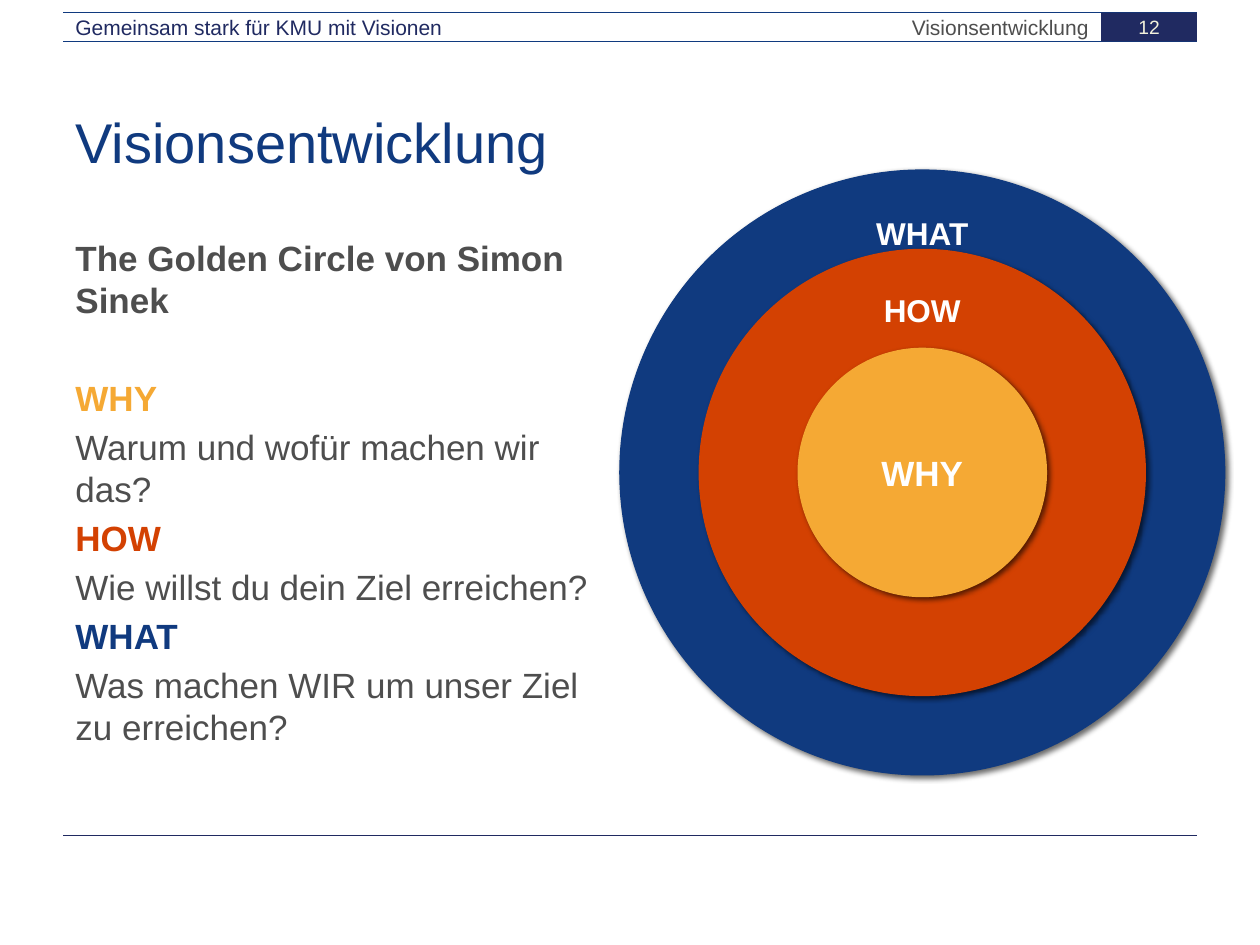
from lxml import etree
from pptx import Presentation
from pptx.dml.color import RGBColor
from pptx.enum import shapes, text
from pptx.oxml import ns
from pptx.util import Inches, Pt

THEME = {
    "font": "Arial",
    "blue": "103A7F", "navy": "202A61", "orange": "D34102", "yellow": "F5A934",
    "grey": "4E4E4E", "cream": "F3F2DC", "white": "FFFFFF",
    "title": 32, "body": 20, "ring": 18, "header": 12, "number": 11,
}
LEFT, TOP, CENTER, RIGHT = text.PP_ALIGN.LEFT, text.MSO_ANCHOR.TOP, text.PP_ALIGN.CENTER, text.PP_ALIGN.RIGHT

TITLE = "Visionsentwicklung"
RULES = [(0.1, "blue"), (0.33, "blue"), (6.63, "navy")]  # height, colour
HEADERS = [  # wording, left, width, colour, alignment
    ("Gemeinsam stark für KMU mit Visionen", 0.5, 4.3, "navy", LEFT),
    ("Visionsentwicklung", 4.8, 3.94, "grey", RIGHT),
]
PAGE_NUMBER = "12"
BODY = [  # wording, colour, bold, space before in points
    ("The Golden Circle von Simon Sinek", "grey", True, 0),
    ("WHY", "yellow", True, 32),
    ("Warum und wofür machen wir das?", "grey", False, 4),
    ("HOW", "orange", True, 4),
    ("Wie willst du dein Ziel erreichen?", "grey", False, 4),
    ("WHAT", "blue", True, 4),
    ("Was machen WIR um unser Ziel zu erreichen?", "grey", False, 4),
]
CIRCLE_CENTER = (7.32, 3.75)
CIRCLES = [(4.8, "blue"), (3.54, "orange"), (1.97, "yellow")]  # diameter, colour
CORE_LABEL = "WHY"
RING_LABELS = [("WHAT", 1.65, 1.0), ("HOW", 2.26, 0.84)]  # wording, top, width


def color(name):
    return RGBColor.from_string(THEME[name])


def format_paragraph(paragraph, size, color_name, bold=False, align=LEFT):
    paragraph.alignment = align
    for run in paragraph.runs:
        run.font.name = THEME["font"]
        run.font.size = Pt(THEME[size])
        run.font.bold = bold
        run.font.color.rgb = color(color_name)


def write(shape, wording, size, color_name, bold=False, align=LEFT,
          anchor=text.MSO_ANCHOR.MIDDLE):
    frame = shape.text_frame
    frame.word_wrap = True
    frame.auto_size = text.MSO_AUTO_SIZE.NONE
    frame.vertical_anchor = anchor
    frame.text = wording
    format_paragraph(frame.paragraphs[0], size, color_name, bold, align)


def add_text(slide, left, top, width, height, *args, **options):
    box = slide.shapes.add_textbox(*map(Inches, (left, top, width, height)))
    write(box, *args, **options)
    return box


def add_filled(slide, kind, left, top, width, height, color_name):
    shape = slide.shapes.add_shape(kind, *map(Inches, (left, top, width, height)))
    shape.shadow.inherit = False
    shape.fill.solid()
    shape.fill.fore_color.rgb = color(color_name)
    shape.line.color.rgb = color(color_name)
    shape.line.width = Pt(0.75)
    return shape


def add_rule(slide, y, color_name):
    rule = slide.shapes.add_connector(
        shapes.MSO_CONNECTOR.STRAIGHT, Inches(0.5), Inches(y), Inches(9.5), Inches(y))
    rule.line.color.rgb = color(color_name)
    rule.line.width = Pt(0.5)
    etree.SubElement(rule._element.spPr, ns.qn("a:effectLst"))


def cast_shadow(shape):
    """Give the shape a soft shadow to the lower right."""
    effects = shape._element.spPr.find(ns.qn("a:effectLst"))
    shadow = etree.SubElement(
        effects, ns.qn("a:outerShdw"), blurRad=str(Pt(3)), dist=str(Pt(2)),
        dir=str(45 * 60000), algn="tl", rotWithShape="0")
    tint = etree.SubElement(shadow, ns.qn("a:srgbClr"), val="000000")
    etree.SubElement(tint, ns.qn("a:alpha"), val="60000")


def add_header(slide):
    for y, color_name in RULES:
        add_rule(slide, y, color_name)
    for wording, left, width, color_name, align in HEADERS:
        add_text(slide, left, 0.05, width, 0.33, wording, "header", color_name, align=align)
    badge = add_filled(slide, shapes.MSO_SHAPE.RECTANGLE, 8.74, 0.1, 0.76, 0.23, "navy")
    badge.line.fill.background()
    write(badge, PAGE_NUMBER, "number", "cream", align=CENTER)


def add_body(slide):
    box = add_text(slide, 0.5, 1.83, 4.42, 4.8, "", "body", "grey", anchor=TOP)
    frame = box.text_frame
    for index, (wording, color_name, bold, gap) in enumerate(BODY):
        paragraph = frame.add_paragraph() if index else frame.paragraphs[0]
        paragraph.text = wording
        paragraph.line_spacing = Pt(24)
        paragraph.space_before = Pt(gap)
        format_paragraph(paragraph, "body", color_name, bold)


def add_golden_circle(slide):
    x, y = CIRCLE_CENTER
    for diameter, color_name in CIRCLES:
        circle = add_filled(slide, shapes.MSO_SHAPE.OVAL, x - diameter / 2,
                            y - diameter / 2, diameter, diameter, color_name)
        cast_shadow(circle)
    write(circle, CORE_LABEL, "body", "white", bold=True, align=CENTER)
    for wording, top, width in RING_LABELS:
        add_text(slide, x - width / 2, top, width, 0.4, wording, "ring", "white",
                 bold=True, align=CENTER)


def main():
    presentation = Presentation()
    presentation.slide_width, presentation.slide_height = Inches(10), Inches(7.5)
    slide = presentation.slides.add_slide(presentation.slide_layouts[5])
    title = slide.shapes.title
    title.left, title.top, title.width, title.height = map(Inches, (0.5, 0.58, 9, 1.08))
    write(title, TITLE, "title", "blue")
    add_header(slide)
    add_body(slide)
    add_golden_circle(slide)
    presentation.save("out.pptx")


if __name__ == "__main__":
    main()
